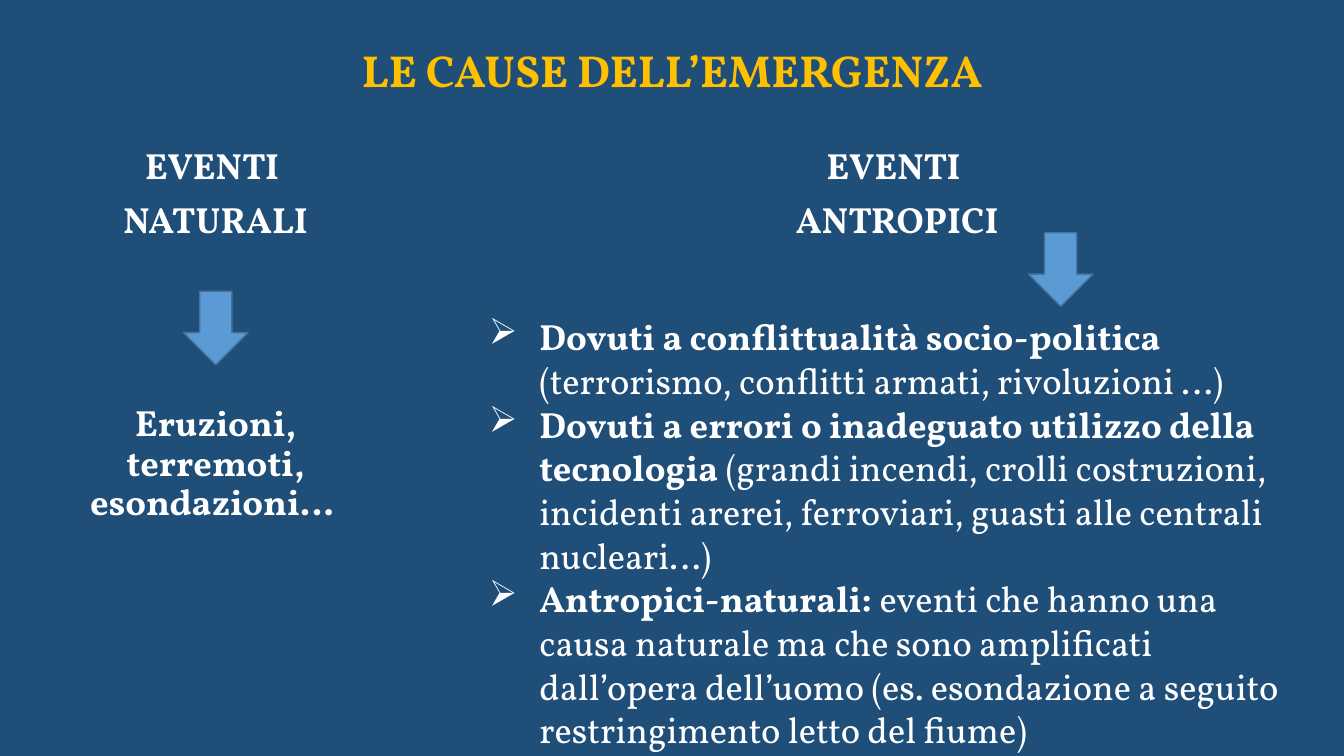
import pptx
import pptx.dml.color
import pptx.enum.shapes
import pptx.enum.text
import pptx.oxml.ns
import pptx.util
import lxml.etree

Inches = pptx.util.Inches
Pt = pptx.util.Pt
RGBColor = pptx.dml.color.RGBColor
ALIGN = pptx.enum.text.PP_ALIGN
ANCHOR = pptx.enum.text.MSO_ANCHOR

FONT = "Vollkorn"
NAVY = RGBColor(0x1F, 0x4E, 0x79)
GOLD = RGBColor(0xFF, 0xC0, 0x00)
WHITE = RGBColor(0xFF, 0xFF, 0xFF)
ARROW_FILL = RGBColor(0x5B, 0x9B, 0xD5)
ARROW_LINE = RGBColor(0x43, 0x73, 0x9E)

HUMAN_CAUSES = [
    ("Dovuti a conflittualità socio-politica ",
     "(terrorismo, conflitti armati, rivoluzioni …)"),
    ("Dovuti a errori o inadeguato utilizzo della tecnologia",
     " (grandi incendi, crolli costruzioni, incidenti arerei, ferroviari, "
     "guasti alle centrali nucleari…)"),
    ("Antropici-naturali:",
     " eventi che hanno una causa naturale ma che sono amplificati "
     "dall’opera dell’uomo (es. esondazione a seguito restringimento letto del fiume)"),
]


def add_frame(page, box, anchor):
    """Add a wrapping text box and return its text frame."""
    frame = page.shapes.add_textbox(*map(Inches, box)).text_frame
    frame.word_wrap = True
    frame.vertical_anchor = anchor
    return frame


def add_para(frame, index):
    """Return the first paragraph of the frame, or a new one after it."""
    return frame.add_paragraph() if index else frame.paragraphs[0]


def add_span(para, text, size=26, color=WHITE, bold=True):
    """Add one styled run to a paragraph."""
    span = para.add_run()
    span.text = text
    span.font.name = FONT
    span.font.size = Pt(size)
    span.font.bold = bold
    span.font.color.rgb = color


def add_title(page, box, text):
    """Place the centred slide title in its box."""
    para = add_frame(page, box, ANCHOR.MIDDLE).paragraphs[0]
    para.alignment = ALIGN.CENTER
    add_span(para, text, 32, GOLD)


def add_label(page, box, lines):
    """Place centred bold lines at the bottom of their box."""
    frame = add_frame(page, box, ANCHOR.BOTTOM)
    for index, line in enumerate(lines):
        para = add_para(frame, index)
        para.alignment = ALIGN.CENTER
        para.line_spacing = 0.9
        para.space_before = Pt(10)
        add_span(para, line)


def add_bullets(page, box, items):
    """Place arrow bullets, each a bold lead followed by plain detail."""
    frame = add_frame(page, box, ANCHOR.BOTTOM)
    for index, (lead, detail) in enumerate(items):
        para = add_para(frame, index)
        add_span(para, lead)
        add_span(para, detail, bold=False)
        properties = para._p.get_or_add_pPr()
        properties.set("marL", str(Inches(0.5)))
        properties.set("indent", str(-Inches(0.5)))
        bullet = lxml.etree.SubElement(properties, pptx.oxml.ns.qn("a:buChar"))
        bullet.set("char", "➢")


def add_arrow(page, left, top):
    """Place a downward arrow with its corner at the given point."""
    arrow = page.shapes.add_shape(
        pptx.enum.shapes.MSO_SHAPE.DOWN_ARROW,
        Inches(left), Inches(top), Inches(0.64), Inches(0.73))
    arrow.shadow.inherit = False
    arrow.fill.solid()
    arrow.fill.fore_color.rgb = ARROW_FILL
    arrow.line.color.rgb = ARROW_LINE
    arrow.line.width = Pt(1)


def add_natural_events(page, box):
    """Build the column of natural events."""
    left, top, width = box
    add_label(page, (left, top, width, 1.11), ["EVENTI ", "NATURALI"])
    add_arrow(page, left + 1.39, top + 1.56)
    add_label(page, (left, top + 2.43, width, 1.48),
              ["Eruzioni, terremoti, esondazioni… "])


def add_human_events(page, box):
    """Build the column of events caused by people."""
    left, top, width, height = box
    add_label(page, (left + 2.44, top, 3.42, 1.11), ["EVENTI ", "ANTROPICI"])
    add_bullets(page, (left, top + 1.64, width, height - 1.64), HUMAN_CAUSES)
    add_arrow(page, left + 5.45, top + 0.98)


def main():
    """Build and save the deck."""
    deck = pptx.Presentation()
    deck.slide_width = Inches(13.33)
    deck.slide_height = Inches(7.5)
    page = deck.slides.add_slide(deck.slide_layouts[6])
    page.background.fill.solid()
    page.background.fill.fore_color.rgb = NAVY
    add_title(page, (0.37, 0.16, 12.6, 1.07), "LE CAUSE DELL’EMERGENZA")
    add_natural_events(page, (0.43, 1.33, 3.42))
    add_human_events(page, (4.75, 1.33, 8.22, 6.17))
    deck.save("out.pptx")


if __name__ == "__main__":
    main()
